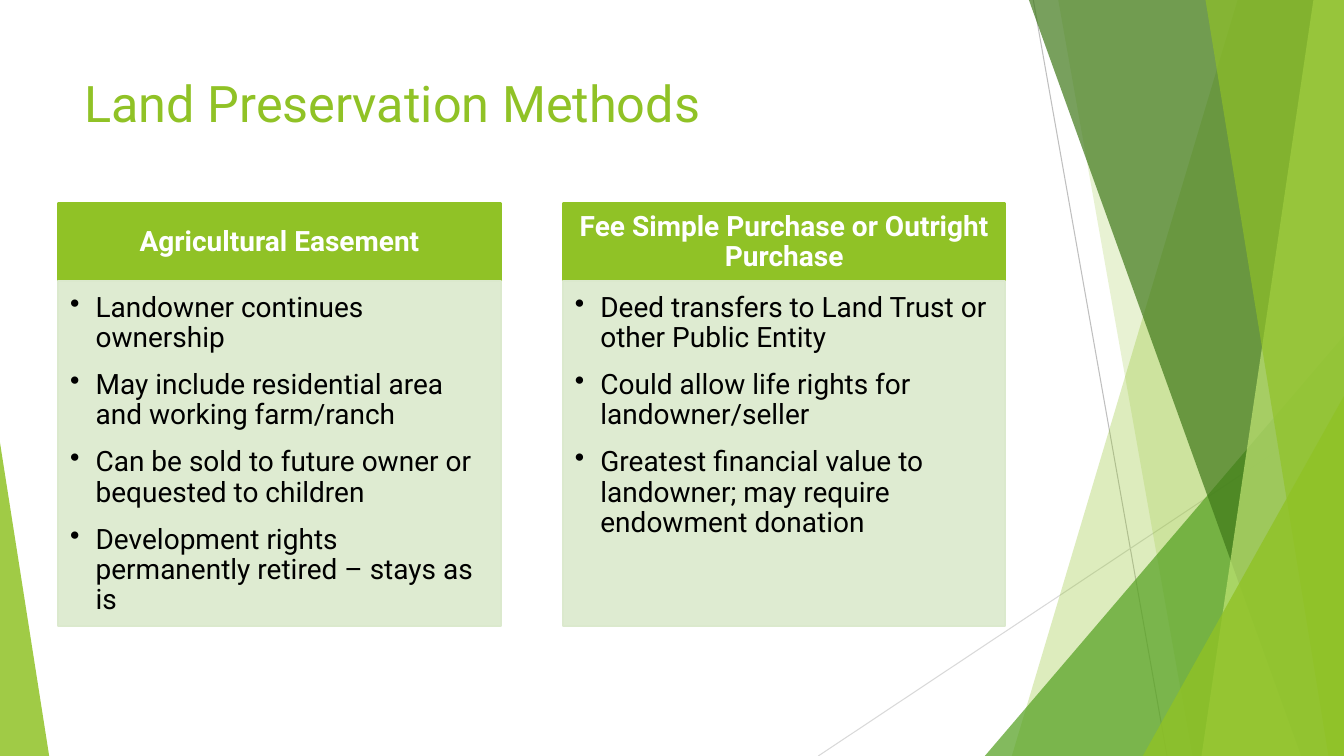
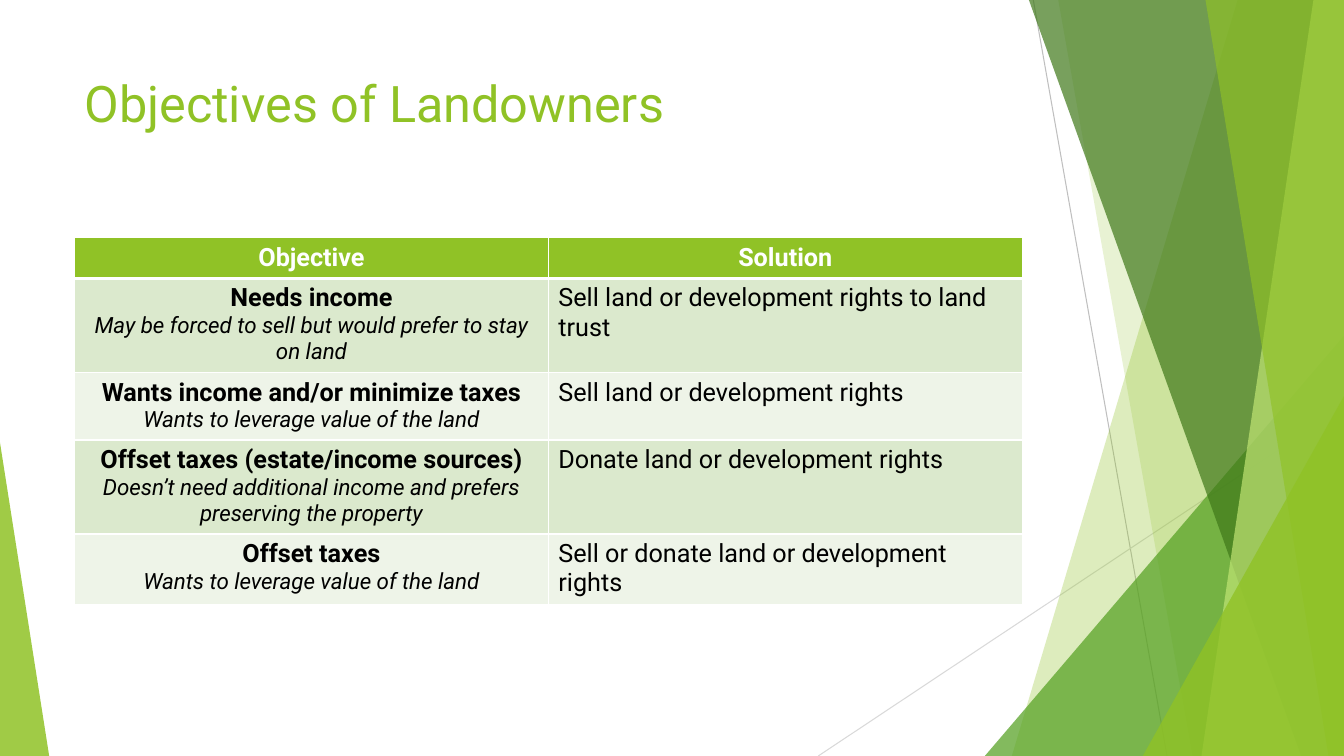
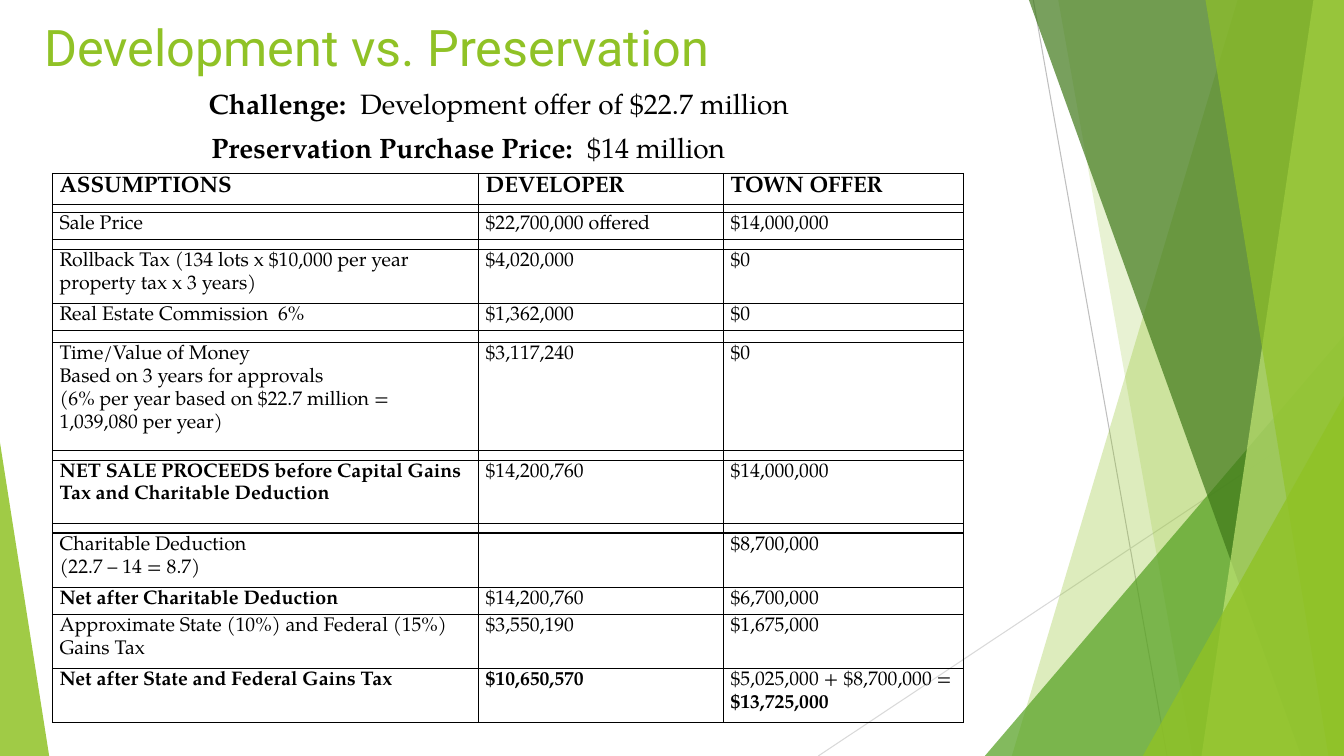
import pptx
import pptx.util
import pptx.dml.color
import pptx.enum.shapes
import pptx.enum.text
from lxml import etree
from pptx.oxml.ns import qn
from pptx.util import Cm, Pt

GREEN, PALE, PALER = "90C226", "DBE9CD", "EEF4E8"
BLACK, WHITE = "000000", "FFFFFF"
SANS, SERIF = "Roboto", "TeX Gyre Pagella"
WIDTH, HEIGHT = 33.87, 19.05
SHAPE = pptx.enum.shapes.MSO_SHAPE
ALIGN = pptx.enum.text.PP_ALIGN


def paint(owner, colour, opacity=100):
    """Fill a shape, line, cell or font with a hex colour."""
    owner.fill.solid()
    owner.fill.fore_color.rgb = pptx.dml.color.RGBColor.from_string(colour)
    if opacity < 100:
        tone = owner.element.spPr.find(".//" + qn("a:srgbClr"))
        etree.SubElement(tone, qn("a:alpha"), val=str(opacity * 1000))


def write(frame, text, lead="", size=20, font=SANS, colour=BLACK, bold=False,
          italic=False, align=ALIGN.LEFT, spacing=1.0, before=0, after=0,
          left=0, bullet=False):
    """Add one paragraph, with an optional bold lead-in."""
    frame.word_wrap = True
    paragraph = frame.paragraphs[0]
    if paragraph.runs:
        paragraph = frame.add_paragraph()
    paragraph.alignment = align
    paragraph.line_spacing = spacing
    paragraph.space_before, paragraph.space_after = Pt(before), Pt(after)
    properties = paragraph._p.get_or_add_pPr()
    if left:
        properties.set("marL", str(Cm(left)))
    if bullet:
        properties.set("indent", str(-Cm(left)))
        etree.SubElement(properties, qn("a:buChar"), char="•")
    if not text:
        etree.SubElement(paragraph._p, qn("a:endParaRPr"), sz=str(size * 100))
    for part, heavy in ((lead, True), (text, bold)):
        if part:
            run = paragraph.add_run()
            run.text = part
            run.font.size, run.font.name = Pt(size), font
            run.font.bold, run.font.italic = heavy, italic
            paint(run.font, colour)


deck = pptx.Presentation()
deck.slide_width, deck.slide_height = Cm(WIDTH), Cm(HEIGHT)

# Shared backdrop: thin rays, then translucent facets from back to front
rays = [(26.04, 0, 29.41, HEIGHT, "BFBFBF"),
        (WIDTH, 10.24, 20.62, HEIGHT, "D9D9D9")]
# Band: upper and lower x of the slanted side; triangle: left and right x
facets = [
    ("band", 31.19, 25.5, 0, GREEN, 30),
    ("band", 26.67, 30.05, 0, GREEN, 20),
    ("triangle", 24.82, WIDTH, 8.46, "54A021", 72),
    ("band", 25.93, 32.79, 0, "3F7819", 70),
    ("band", 33.1, 30.28, 0, "C0E474", 70),
    ("band", 30.38, 33.48, 0, GREEN, 65),
    ("triangle", 28.8, WIDTH, 9.98, GREEN, 80),
    ("triangle", 0, 1.24, 11.15, GREEN, 85),
]
titles = [("Land Preservation Methods", 1.88, 1.7),
          ("Objectives of Landowners", 1.88, 1.7),
          ("Development vs. Preservation", 0.86, 0.28)]
slides = []
for title, title_left, title_top in titles:
    slide = deck.slides.add_slide(deck.slide_layouts[6])
    slides.append(slide)
    for x1, y1, x2, y2, colour in rays:
        ray = slide.shapes.add_connector(
            pptx.enum.shapes.MSO_CONNECTOR.STRAIGHT, Cm(x1), Cm(y1), Cm(x2), Cm(y2))
        paint(ray.line, colour)
        ray.line.width = Pt(0.75)
        etree.SubElement(ray.element.spPr, qn("a:effectLst"))
    for kind, x1, x2, top, colour, opacity in facets:
        if kind == "band":
            outline = slide.shapes.build_freeform(Cm(x1), 0)
            outline.add_line_segments([(Cm(WIDTH), 0), (Cm(WIDTH), Cm(HEIGHT)),
                                       (Cm(x2), Cm(HEIGHT))])
            facet = outline.convert_to_shape()
        else:
            facet = slide.shapes.add_shape(
                SHAPE.ISOSCELES_TRIANGLE, Cm(x1), Cm(top), Cm(x2 - x1), Cm(HEIGHT - top))
            facet.adjustments[0] = 1 if x1 else 0
        paint(facet, colour, opacity)
        facet.line.fill.background()
        facet.shadow.inherit = False
    heading = slide.shapes.add_textbox(Cm(title_left), Cm(title_top), Cm(23.88), Cm(1.8))
    write(heading.text_frame, title, size=36, colour=GREEN)
methods_slide, objectives_slide, comparison_slide = slides

# Slide 1: two method columns
methods = [
    ("Agricultural Easement",
     ["Landowner continues ownership",
      "May include residential area and working farm/ranch",
      "Can be sold to future owner or bequested to children",
      "Development rights permanently retired – stays as is"]),
    ("Fee Simple Purchase or Outright Purchase",
     ["Deed transfers to Land Trust or other Public Entity",
      "Could allow life rights for landowner/seller",
      "Greatest financial value to landowner; may require endowment donation"]),
]
for column, (method, points) in enumerate(methods):
    left = 1.47 + column * 12.72
    for top, height, colour, opacity, insets, anchor in (
            (5.13, 1.96, GREEN, 100, (0.41, 0.23, 0.41, 0.23), "MIDDLE"),
            (7.09, 8.69, PALE, 90, (0.3, 0.3, 0.41, 0.43), "TOP")):
        panel = methods_slide.shapes.add_shape(
            SHAPE.RECTANGLE, Cm(left), Cm(top), Cm(11.15), Cm(height))
        paint(panel, colour, opacity)
        paint(panel.line, colour)
        panel.line.width = Pt(1.5)
        panel.shadow.inherit = False
        frame = panel.text_frame
        frame.margin_left, frame.margin_top, frame.margin_right, frame.margin_bottom = map(Cm, insets)
        frame.vertical_anchor = pptx.enum.text.MSO_ANCHOR[anchor]
        if colour == GREEN:
            write(frame, method, colour=WHITE, bold=True, align=ALIGN.CENTER, spacing=0.9)
        else:
            for point in points:
                write(frame, point, spacing=0.9, after=12, left=0.64, bullet=True)

# Slide 2: objectives and solutions
objectives = [
    (2.31, "Needs income", "May be forced to sell but would prefer to stay on land",
     "Sell land or development rights to land trust"),
    (1.67, "Wants income and/or minimize taxes", "Wants to leverage value of the land",
     "Sell land or development rights"),
    (2.31, "Offset taxes (estate/income sources)",
     "Doesn’t need additional income and prefers preserving the property",
     "Donate land or development rights"),
    (1.75, "Offset taxes", "Wants to leverage value of the land",
     "Sell or donate land or development rights"),
]
objectives_table = objectives_slide.shapes.add_table(
    5, 2, Cm(1.88), Cm(5.99), Cm(23.88), Cm(9.07)).table
objectives_table.rows[0].height = Cm(1.03)
for column, label in enumerate(("Objective", "Solution")):
    cell = objectives_table.cell(0, column)
    paint(cell, GREEN)
    write(cell.text_frame, label, size=18, colour=WHITE, bold=True, align=ALIGN.CENTER)
for row, (height, objective, reason, solution) in enumerate(objectives, 1):
    objectives_table.rows[row].height = Cm(height)
    need, answer = objectives_table.rows[row].cells
    for cell in (need, answer):
        paint(cell, PALE if row % 2 else PALER)
    write(need.text_frame, objective, size=18, bold=True, align=ALIGN.CENTER)
    write(need.text_frame, reason, size=16, italic=True, align=ALIGN.CENTER)
    write(answer.text_frame, solution, size=18)

# Slide 3: the two offers
offers = comparison_slide.shapes.add_textbox(Cm(1.07), Cm(2.06), Cm(21.46), Cm(2.31)).text_frame
write(offers, "Development offer of $22.7 million", lead="Challenge:  ",
      font=SERIF, align=ALIGN.CENTER, left=1.55)
write(offers, "$14 million", lead="Preservation Purchase Price:  ",
      font=SERIF, align=ALIGN.CENTER, before=7)

# Slide 3: assumptions, with narrow spacer rows
assumptions = [
    (0.78, "ASSUMPTIONS", "DEVELOPER", "TOWN OFFER"),
    (0.2, "", "", ""),
    (0.68, "Sale Price", "$22,700,000 offered", "$14,000,000"),
    (0.25, "", "", ""),
    (1.36, "Rollback Tax (134 lots x $10,000 per year property tax x 3 years)",
     "$4,020,000", "$0"),
    (0.68, "Real Estate Commission  6%", "$1,362,000", "$0"),
    (0.3, "", "", ""),
    (2.72, "Time/Value of Money\nBased on 3 years for approvals\n"
     "(6% per year based on $22.7 million =\n1,039,080 per year)", "$3,117,240", "$0"),
    (0.25, "", "", ""),
    (1.58, "NET SALE PROCEEDS before Capital Gains Tax and Charitable Deduction",
     "$14,200,760", "$14,000,000"),
    (0.25, "", "", ""),
    (1.36, "Charitable Deduction\n(22.7 – 14 = 8.7)", "", "$8,700,000"),
    (0.68, "Net after Charitable Deduction", "$14,200,760", "$6,700,000"),
    (1.36, "Approximate State (10%) and Federal (15%) Gains Tax", "$3,550,190", "$1,675,000"),
    (1.36, "Net after State and Federal Gains Tax", "$10,650,570",
     "$5,025,000 + $8,700,000 =\n$13,725,000"),
]
emphasised = {"$10,650,570", "$13,725,000"}
assumptions_table = comparison_slide.shapes.add_table(
    len(assumptions), 3, Cm(1.32), Cm(4.37), Cm(22.96), Cm(13.81)).table
for column, width in enumerate((10.74, 6.17, 6.05)):
    assumptions_table.columns[column].width = Cm(width)
for row, (height, *entries) in enumerate(assumptions):
    assumptions_table.rows[row].height = Cm(height)
    for column, entry in enumerate(entries):
        cell = assumptions_table.cell(row, column)
        cell.fill.background()
        cell.margin_left = cell.margin_right = Cm(0.18)
        cell.margin_top = cell.margin_bottom = 0
        if not entry:
            write(cell.text_frame, "", size=4)
            continue
        for line in entry.split("\n"):
            strong = row == 0 or line in emphasised or line.upper().startswith("NET ")
            write(cell.text_frame, line, size=14 if row else 16, font=SERIF,
                  bold=strong, spacing=1.15)

# Cell borders of both tables
for table, colour, header_rule in ((objectives_table, WHITE, 3), (assumptions_table, BLACK, 1)):
    table.first_row = table.horz_banding = False
    for row, table_row in enumerate(table.rows):
        for cell in table_row.cells:
            properties = cell._tc.get_or_add_tcPr()
            for order, side in enumerate("LRTB"):
                under_header = (row, side) in ((0, "B"), (1, "T"))
                border = etree.Element(
                    qn("a:ln" + side), w=str(Pt(header_rule if under_header else 1)))
                stroke = etree.SubElement(border, qn("a:solidFill"))
                etree.SubElement(stroke, qn("a:srgbClr"), val=colour)
                properties.insert(order, border)

deck.save("out.pptx")
